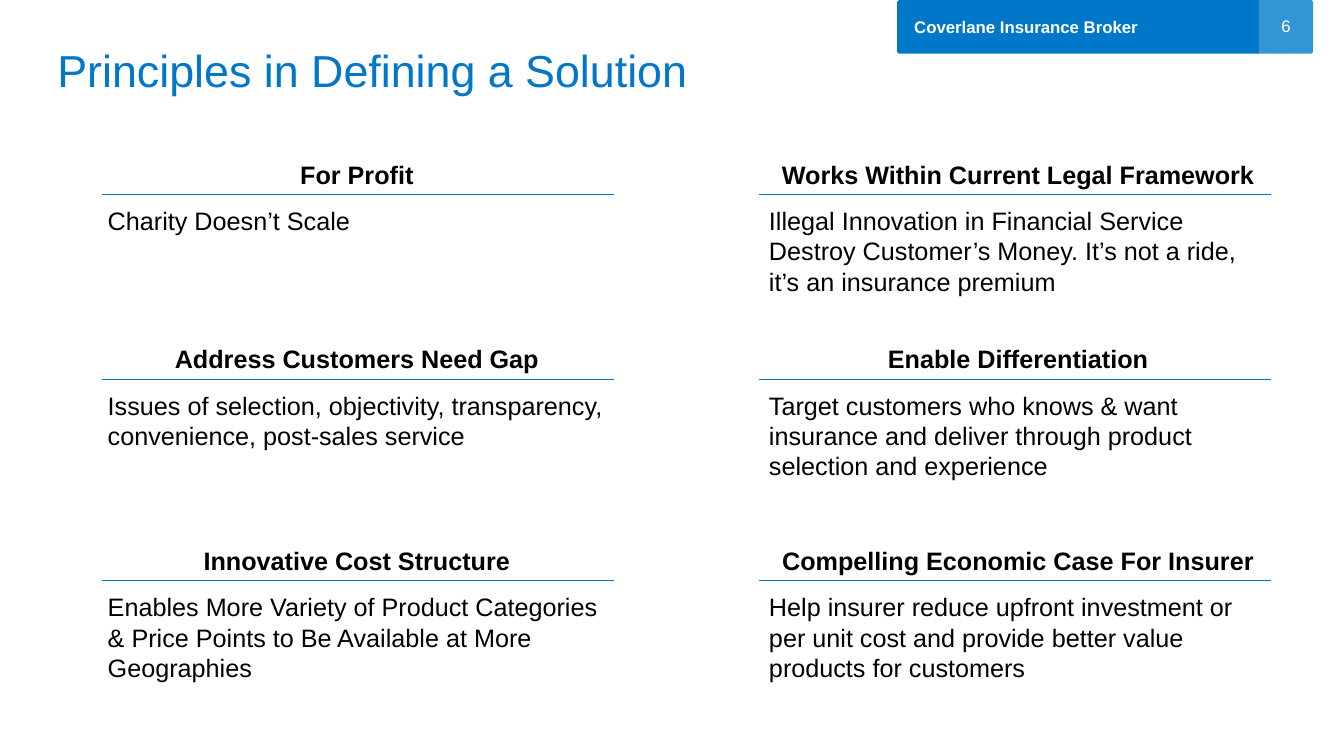
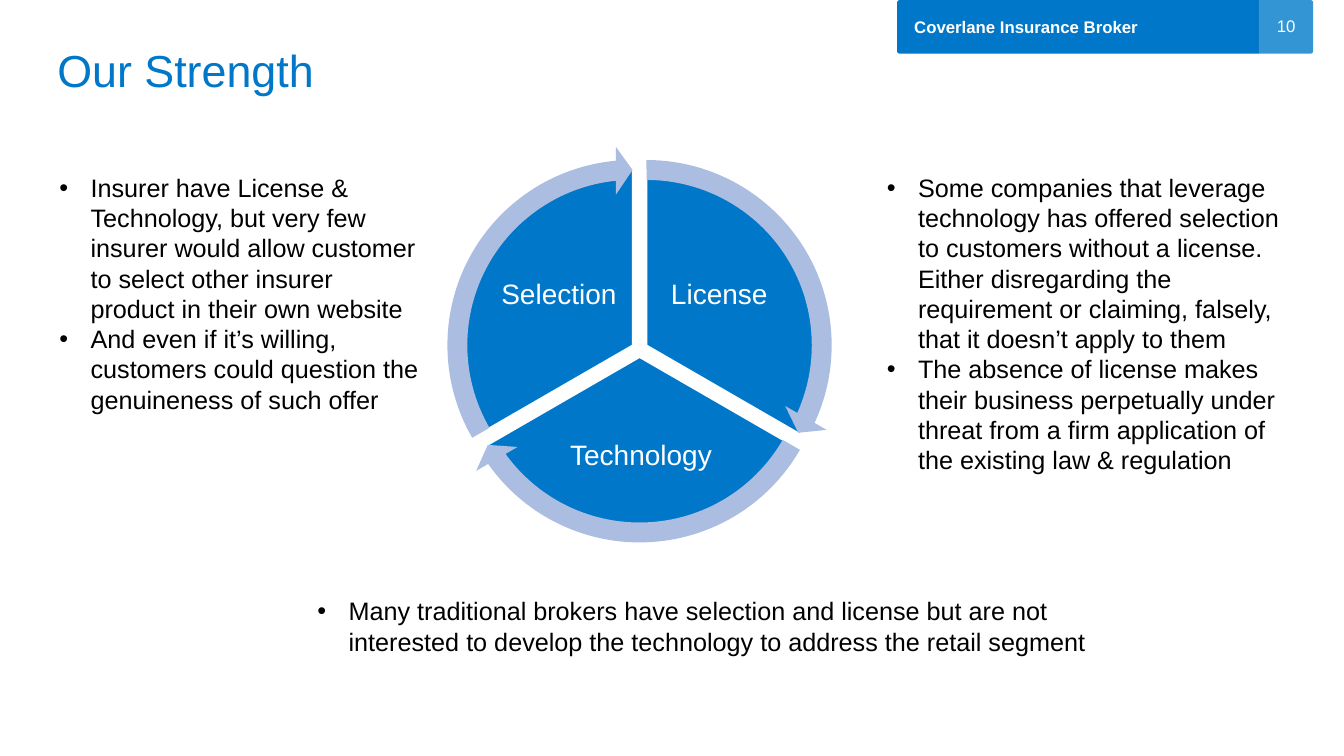
from math import cos, radians, sin

from lxml.etree import SubElement
from pptx import Presentation
from pptx.dml.color import RGBColor
from pptx.enum.shapes import MSO_CONNECTOR, MSO_SHAPE
from pptx.enum.text import MSO_ANCHOR, PP_ALIGN
from pptx.oxml.ns import qn
from pptx.util import Inches, Pt

HUE = {"blue": "0077C8", "sky": "3395D3", "pale": "ABBDE0", "white": "FFFFFF", "black": "000000"}
FONT = "Arial"

deck = Presentation()
deck.slide_width, deck.slide_height = Inches(13.333), Inches(7.5)
# One hundredth of the slide's width and height
X, Y = deck.slide_width / 100, deck.slide_height / 100


def draw(slide, kind, box, fill, adj, line=None):
    """Add a flat preset shape; box is left, top, width, height in EMU."""
    shape = slide.shapes.add_shape(kind, *map(int, box))
    shape.shadow.inherit = False
    shape.fill.solid()
    shape.fill.fore_color.rgb = RGBColor.from_string(HUE[fill])
    if line:
        shape.line.color.rgb = RGBColor.from_string(HUE[line])
        shape.line.width = Pt(1)
    else:
        shape.line.fill.background()
    for i, value in enumerate(adj):
        shape.adjustments[i] = value
    return shape


def write(slide, at, lines, size=18, hue="black", bold=False, align=PP_ALIGN.LEFT,
          anchor=MSO_ANCHOR.TOP, space=1.0, inset=None, bullet=False):
    """Add a text box; at is left, top, width, height in percent of the slide."""
    x, y, w, h = at
    frame = slide.shapes.add_textbox(int(x * X), int(y * Y), int(w * X), int(h * Y)).text_frame
    frame.word_wrap = True
    frame.vertical_anchor = anchor
    if inset is not None:
        frame.margin_left = frame.margin_right = inset
        frame.margin_top = frame.margin_bottom = inset
    for i, line in enumerate(lines):
        para = frame.add_paragraph() if i else frame.paragraphs[0]
        if bullet:
            props = para._p.get_or_add_pPr()
            props.set("marL", str(Inches(0.31)))
            props.set("indent", str(-Inches(0.31)))
            SubElement(props, qn("a:buFont")).set("typeface", FONT)
            SubElement(props, qn("a:buChar")).set("char", "•")
        para.alignment = align
        para.line_spacing = space
        run = para.add_run()
        run.text = line
        run.font.name, run.font.size, run.font.bold = FONT, Pt(size), bold
        run.font.color.rgb = RGBColor.from_string(HUE[hue])


# Shared title, band and page number
TABS = [(66.75, 26.93, 270, "blue"), (93.67, 4.03, 90, "sky")]
pages = []
for title, number in [("Principles in Defining a Solution", "6"), ("Our Strength", "10")]:
    page = deck.slides.add_slide(deck.slide_layouts[6])
    pages.append(page)
    for left, width, turn, fill in TABS:
        long, short = width * X, 7.1 * Y
        shift = (long - short) / 2
        tab = draw(page, MSO_SHAPE.ROUND_2_SAME_RECTANGLE,
                   (left * X + shift, -shift, short, long), fill, (0.05, 0))
        tab.rotation = turn
    write(page, (93.82, 1.47, 3.75, 4), [number], 12, "white", align=PP_ALIGN.CENTER)
    write(page, (67.28, 1.6, 26.03, 4.27), ["Coverlane Insurance Broker"], 12, "white", True,
          anchor=MSO_ANCHOR.MIDDLE, space=0.9)
    write(page, (3.53, 0, 63.23, 13.47), [title], 32, "blue", anchor=MSO_ANCHOR.BOTTOM)
rules, wheel = pages

# Principles: two columns by three rows, each a heading, a rule and a text
COLS = [(7.28, 7.58), (56.48, 56.48)]
ROWS = [25.73, 50.13, 76.8]
CELLS = [
    [("For Profit", "Charity Doesn’t Scale"),
     ("Works Within Current Legal Framework",
      "Illegal Innovation in Financial Service Destroy Customer’s Money. "
      "It’s not a ride, it’s an insurance premium")],
    [("Address Customers Need Gap",
      "Issues of selection, objectivity, transparency, convenience, post-sales service"),
     ("Enable Differentiation",
      "Target customers who knows & want insurance and deliver through product "
      "selection and experience")],
    [("Innovative Cost Structure",
      "Enables More Variety of Product Categories & Price Points to Be Available "
      "at More Geographies"),
     ("Compelling Economic Case For Insurer",
      "Help insurer reduce upfront investment or per unit cost and provide better "
      "value products for customers")],
]
for y, row in zip(ROWS, CELLS):
    for (left, start), (head, body) in zip(COLS, row):
        rule = rules.shapes.add_connector(MSO_CONNECTOR.STRAIGHT, int(start * X), int(y * Y),
                                          int((start + 38.1) * X), int(y * Y))
        rule.line.color.rgb = RGBColor.from_string(HUE["blue"])
        rule.line.width = Pt(0.5)
        SubElement(rule._element.spPr, qn("a:effectLst"))
        write(rules, (left, y - 5.33, 38.55, 5.33), [head], bold=True, align=PP_ALIGN.CENTER)
        write(rules, (left, y + 0.8, 38.55, 13.47), [body])

# Strength: three sectors pushed out from the hub, each with an arrow around it
HUB = (47.59 * X, 46.2 * Y)
PUSH, PIE, RING = 0.6 * X, 26.33 * X, 29.63 * X
TURN = 0.6  # adjustment units per degree
SECTORS = [
    ("License", 270, (48.83, 32.13, 9.38, 13.87)),
    ("Technology", 30, (40.65, 54.27, 14.1, 12.27)),
    ("Selection", 150, (36.9, 32.13, 9.38, 13.87)),
]
arrows = []
for name, start, at in SECTORS:
    mid, end = radians(start + 60), (start + 120) % 360
    x, y = HUB[0] + PUSH * cos(mid), HUB[1] + PUSH * sin(mid)
    draw(wheel, MSO_SHAPE.PIE, (x - PIE / 2, y - PIE / 2, PIE, PIE), "blue",
         (start * TURN, end * TURN), "white")
    write(wheel, at, [name], 20, "white", align=PP_ALIGN.CENTER, anchor=MSO_ANCHOR.MIDDLE,
          space=0.9, inset=Inches(0.03))
    arrows.append(((x - RING / 2, y - RING / 2, RING, RING),
                   (0.05, 3.28, end * TURN - 3.28, start * TURN, 0.06)))
for box, adj in arrows:
    draw(wheel, MSO_SHAPE.CIRCULAR_ARROW, box, "pale", adj)

NOTES = [
    ((3.68, 22.13, 28.43, 33.6),
     ["Insurer have License & Technology, but very few insurer would allow customer to "
      "select other insurer product in their own website",
      "And even if it’s willing, customers could question the genuineness of such offer"]),
    ((65.25, 22.13, 32.7, 41.73),
     ["Some companies that leverage technology has offered selection to customers without "
      "a license. Either disregarding the requirement or claiming, falsely, that it "
      "doesn’t apply to them",
      "The absence of license makes their business perpetually under threat from a firm "
      "application of the existing law & regulation"]),
    ((22.88, 78.13, 58.73, 9.47),
     ["Many traditional brokers have selection and license but are not interested to "
      "develop the technology to address the retail segment"]),
]
for at, lines in NOTES:
    write(wheel, at, lines, bullet=True)

deck.save("out.pptx")
